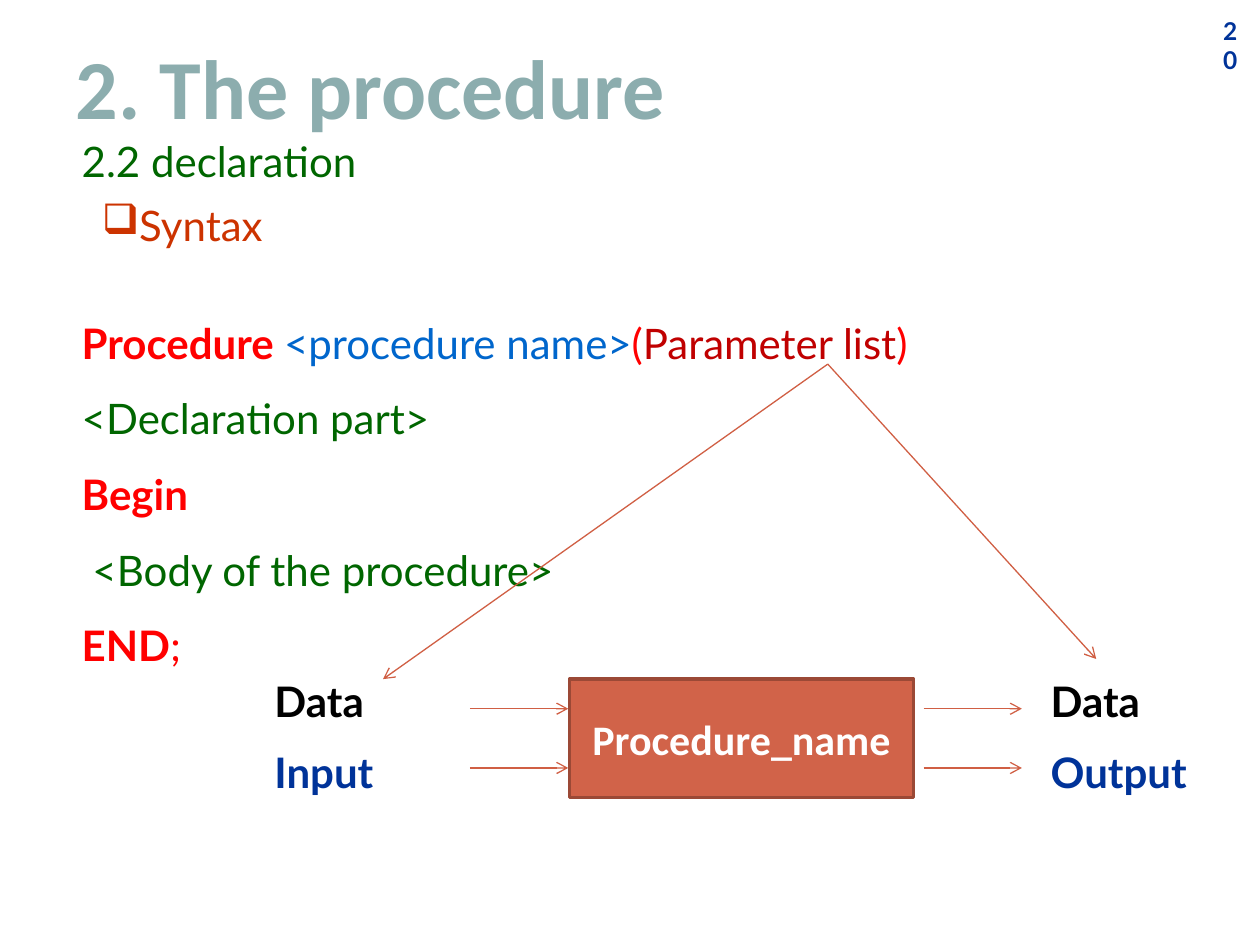
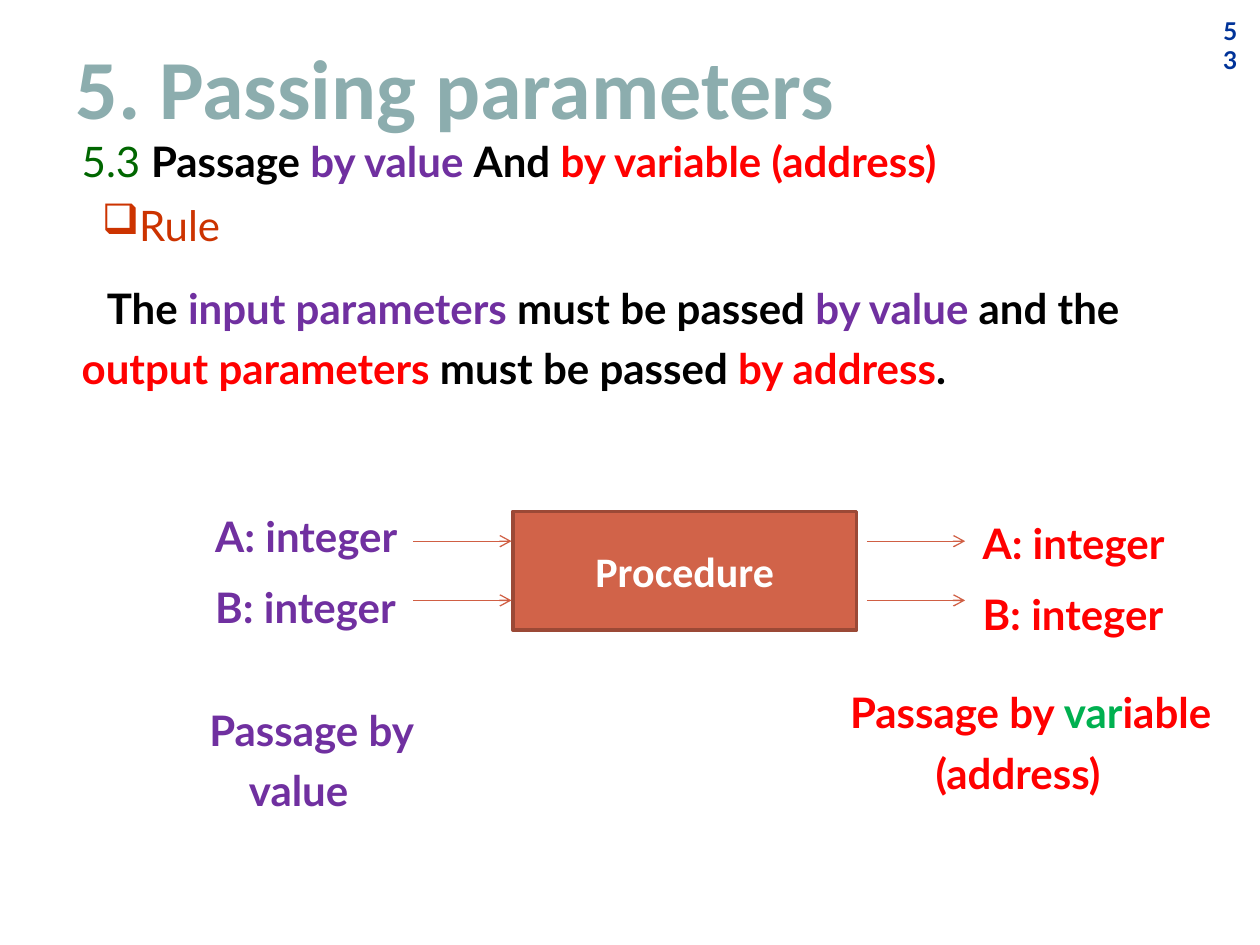
from lxml.etree import SubElement
from pptx import Presentation
from pptx.dml.color import RGBColor
from pptx.enum.shapes import MSO_CONNECTOR, MSO_SHAPE
from pptx.enum.text import MSO_ANCHOR, MSO_AUTO_SIZE, PP_ALIGN
from pptx.oxml.ns import qn
from pptx.util import Inches, Pt

# Colours
TEAL = RGBColor(0x8C, 0xAD, 0xAE)
NAVY = RGBColor(0x00, 0x33, 0x99)
BLUE = RGBColor(0x00, 0x66, 0xCC)
DARK_GREEN = RGBColor(0x00, 0x66, 0x00)
GREEN = RGBColor(0x00, 0xB0, 0x50)
RUST = RGBColor(0xCC, 0x33, 0x00)
RED = RGBColor(0xFF, 0x00, 0x00)
DARK_RED = RGBColor(0xC0, 0x00, 0x00)
PURPLE = RGBColor(0x70, 0x30, 0xA0)
BLACK = RGBColor(0x00, 0x00, 0x00)
WHITE = RGBColor(0xFF, 0xFF, 0xFF)
BOX_FILL = RGBColor(0xD1, 0x63, 0x49)
BOX_LINE = RGBColor(0x9B, 0x49, 0x36)
ARROW = RGBColor(0xD0, 0x5F, 0x44)

# Text styles
TITLE = {"name": "Calibri", "size": Pt(48)}
BODY = {"name": "Lato", "size": Pt(24)}
NUMBER = {"name": "Lato", "size": Pt(14)}
BOX_TEXT = {"name": "Calibri", "size": Pt(24)}

# Paragraph styles
PLAIN = {"alignment": PP_ALIGN.LEFT}
CENTRED = {"alignment": PP_ALIGN.CENTER}
CODE = {"line_spacing": 1.5}
LABEL = {"line_spacing": 1.2}
CENTRED_LABEL = {**LABEL, **CENTRED}

# Grid of the slide, and the procedure box on it
COLUMNS, ROWS = 100, 75
BOX_WIDTH, BOX_HEIGHT = 27.3, 9.4
ARROW_LENGTH, GAP_BEFORE, GAP_AFTER = 7.8, 0.1, 0.8
FIRST_LINE_INDENT = Inches(0.2)


def set_attributes(target, values):
    for name, value in values.items():
        setattr(target, name, value)


class Deck:
    def __init__(self):
        self.presentation = Presentation()
        self.presentation.slide_width = Inches(10)
        self.presentation.slide_height = Inches(7.5)
        self.slide = None

    def place(self, column, row):
        return (round(self.presentation.slide_width * column / COLUMNS),
                round(self.presentation.slide_height * row / ROWS))

    def fill_text(self, shape, paragraphs, font, layout=PLAIN, anchor=MSO_ANCHOR.TOP,
                  indent=0, space_before=0, bullet=None):
        """Each paragraph is a list of (text, colour, bold) runs."""
        frame = shape.text_frame
        set_attributes(frame, {"word_wrap": True, "auto_size": MSO_AUTO_SIZE.NONE,
                               "vertical_anchor": anchor})
        for index, runs in enumerate(paragraphs):
            paragraph = frame.add_paragraph() if index else frame.paragraphs[0]
            properties = paragraph._p.get_or_add_pPr()
            properties.set("marL", "0")
            properties.set("indent", str(indent))
            if bullet:
                SubElement(properties, qn("a:buChar")).set("char", bullet)
            set_attributes(paragraph, layout)
            if index and space_before:
                paragraph.space_before = Pt(space_before)
            for text, colour, bold in runs:
                run = paragraph.add_run()
                run.text = text
                set_attributes(run.font, {**font, "bold": bold})
                run.font.color.rgb = colour

    def text(self, column, row, width, height, paragraphs, font=BODY, **options):
        shape = self.slide.shapes.add_textbox(*self.place(column, row), *self.place(width, height))
        self.fill_text(shape, paragraphs, font, **options)

    def labels(self, column, row, width, height, paragraphs, layout=LABEL):
        self.text(column, row, width, height, paragraphs, layout=layout,
                  indent=FIRST_LINE_INDENT, space_before=6)

    def start(self, title, number, section, topic):
        layout = self.presentation.slide_layouts[5]
        self.slide = self.presentation.slides.add_slide(layout)
        placeholder = self.slide.shapes.title
        placeholder.left, placeholder.top = self.place(5, 2.3)
        placeholder.width, placeholder.height = self.place(91.9, 9.1)
        middle = {"anchor": MSO_ANCHOR.MIDDLE}
        self.fill_text(placeholder, [[(title, TEAL, True)]], TITLE, **middle)
        self.text(96.1, 1.9, 3.2, 3.4, [[(number, NAVY, True)]], NUMBER, **middle)
        self.text(5.5, 10.2, 91.9, 5.1, [section], **middle)
        self.text(7.1, 15.3, 91.9, 5.1, [[(topic, RUST, False)]], bullet="❑", **middle)

    def arrow(self, start, end):
        connector = self.slide.shapes.add_connector(
            MSO_CONNECTOR.STRAIGHT, *self.place(*start), *self.place(*end))
        connector.line.color.rgb = ARROW
        connector.line.width = Pt(0.75)
        properties = connector.element.spPr
        SubElement(properties.find(qn("a:ln")), qn("a:tailEnd")).set("type", "arrow")
        SubElement(properties, qn("a:effectLst"))

    def procedure_box(self, column, row, name):
        """Box with two arrows going in and two coming out."""
        box = self.slide.shapes.add_shape(
            MSO_SHAPE.RECTANGLE, *self.place(column, row), *self.place(BOX_WIDTH, BOX_HEIGHT))
        box.shadow.inherit = False
        box.fill.solid()
        box.fill.fore_color.rgb = BOX_FILL
        box.line.color.rgb = BOX_LINE
        box.line.width = Pt(2)
        self.fill_text(box, [[(name, WHITE, True)]], BOX_TEXT, CENTRED, MSO_ANCHOR.MIDDLE)
        starts = (column - GAP_BEFORE - ARROW_LENGTH, column + BOX_WIDTH + GAP_AFTER)
        for start in starts:
            for share in (0.25, 0.75):
                level = row + BOX_HEIGHT * share
                self.arrow((start, level), (start + ARROW_LENGTH, level))


def build_declaration(deck):
    deck.start("2. The procedure", "20", [("2.2 declaration", DARK_GREEN, False)], "Syntax")

    # Syntax of a procedure
    deck.text(5.5, 22.7, 91.9, 31.3, [
        [("Procedure ", RED, True), ("<procedure name>", BLUE, False), ("(", RED, False),
         ("Parameter list", DARK_RED, False), (")", RED, False)],
        [("<Declaration part>", DARK_GREEN, False)],
        [("Begin", RED, True)],
        [(" ", BLACK, False), ("<Body of the procedure>", DARK_GREEN, False)],
        [("END", RED, True), (";", RED, False)],
    ], layout=CODE)

    # Data flow
    deck.procedure_box(45.2, 53.9, "Procedure_name")
    for column, direction in ((18.8, "Input"), (80.4, "Output")):
        deck.labels(column, 52.3, 23.3, 11.5,
                    [[("Data", BLACK, True)], [(direction, NAVY, True)]])

    # From the parameter list to the data
    for end in ((30.4, 53.9), (87, 52.3)):
        deck.arrow((65.7, 28.9), end)


def build_passing_rule(deck):
    deck.start("5. Passing parameters", "53", [
        ("5.3 ", DARK_GREEN, False), ("Passage ", BLACK, True), ("by value ", PURPLE, True),
        ("And ", BLACK, True), ("by variable (address)", RED, True)], "Rule")

    # Rule
    deck.labels(5.5, 21.1, 91.9, 10.7, [[
        ("The ", BLACK, True), ("input parameters ", PURPLE, True),
        ("must be passed ", BLACK, True), ("by value ", PURPLE, True),
        ("and the ", BLACK, True), ("output parameters", RED, True),
        (" must be passed ", BLACK, True), ("by address", RED, True), (".", BLACK, True)]])

    # Data flow
    deck.procedure_box(40.7, 40.6, "Procedure")
    for column, row, colour in ((14.1, 39.2, PURPLE), (75, 39.8, RED)):
        deck.labels(column, row, 21.9, 11.5,
                    [[(f"{variable}: integer", colour, True)] for variable in "AB"])

    # Kinds of passage
    deck.labels(9.8, 54.6, 27.8, 10.7, [[("Passage by value", PURPLE, True)]], CENTRED_LABEL)
    deck.labels(62.6, 53.2, 36.4, 10.7, [[
        ("Passage by ", RED, True), ("var", GREEN, True), ("iable (address)", RED, True)]],
        CENTRED_LABEL)


def main():
    deck = Deck()
    build_declaration(deck)
    build_passing_rule(deck)
    deck.presentation.save("out.pptx")


if __name__ == "__main__":
    main()
